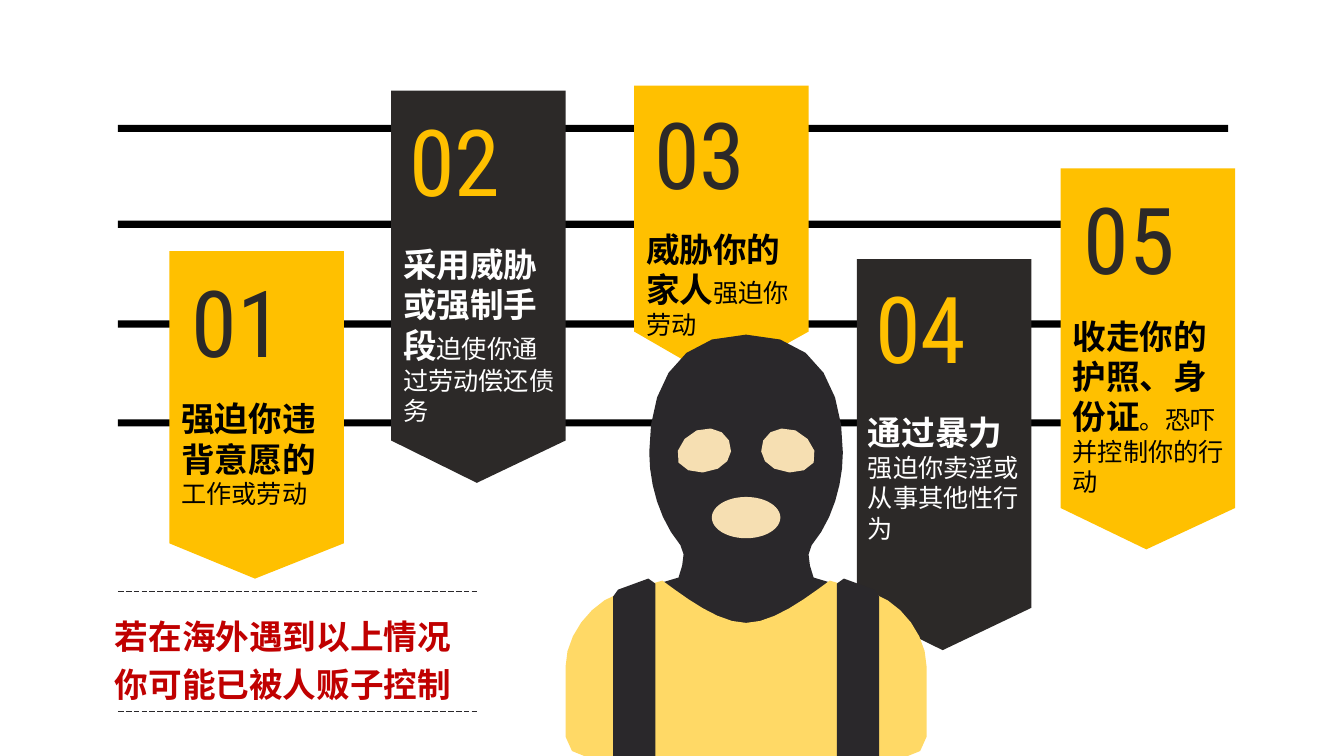
import math

import pptx
import pptx.util
import pptx.dml.color
import pptx.enum.dml
import pptx.enum.shapes
import pptx.enum.text
import pptx.oxml

Inches = pptx.util.Inches
RGBColor = pptx.dml.color.RGBColor
BLACK = RGBColor(0x00, 0x00, 0x00)
WHITE = RGBColor(0xFF, 0xFF, 0xFF)
RED = RGBColor(0xC0, 0x00, 0x00)
GOLD = RGBColor(0xFF, 0xC0, 0x00)
CHARCOAL = RGBColor(0x2C, 0x29, 0x28)
MASK = RGBColor(0x2A, 0x28, 0x2B)
SKIN = RGBColor(0xF6, 0xDF, 0xB2)
SHIRT = RGBColor(0xFF, 0xD9, 0x66)

prs = pptx.Presentation()
prs.slide_width = Inches(13.33)
prs.slide_height = Inches(7.5)
s = prs.slides.add_slide(prs.slide_layouts[6])


def add_outline(points, color, curved=True):
    corners = points
    if curved:
        corners = [points[0]]
        for i in range(0, len(points) - 1, 3):
            a, b, c, d = points[i:i + 4]
            straight = b == c and b in (a, d)
            steps = 1 if straight else min(6, math.ceil(math.dist(a, d) / 0.15))
            for t in [n / steps for n in range(1, steps + 1)]:
                u = 1 - t
                corners.append([u**3 * a[k] + 3 * u * u * t * b[k] + 3 * u * t * t * c[k] + t**3 * d[k]
                                for k in (0, 1)])
    corners = [(Inches(x), Inches(y)) for x, y in corners]
    if corners[-1] == corners[0]:
        corners.pop()
    fb = s.shapes.build_freeform(*corners[0])
    fb.add_line_segments(corners[1:], close=True)
    sp = fb.convert_to_shape()
    sp.shadow.inherit = False
    sp.fill.solid()
    sp.fill.fore_color.rgb = color
    sp.line.fill.background()


def add_text(box, paragraphs, wrap=True, inset=None, spacing=None):
    tf = s.shapes.add_textbox(*[Inches(v) for v in box]).text_frame
    tf.word_wrap = wrap
    tf.auto_size = pptx.enum.text.MSO_AUTO_SIZE.SHAPE_TO_FIT_TEXT
    if inset is not None:
        tf.margin_left = tf.margin_right = tf.margin_top = tf.margin_bottom = Inches(inset)
    for i, runs in enumerate(paragraphs):
        p = tf.add_paragraph() if i else tf.paragraphs[0]
        if spacing:
            p.line_spacing = spacing
        for text, size, bold, color, font in runs:
            r = p.add_run()
            r.text = text
            r.font.size = pptx.util.Pt(size)
            r.font.bold = bold
            r.font.name = font
            r.font.color.rgb = color


for top in (1.24, 2.19, 3.18, 4.16):
    sp = s.shapes.add_shape(pptx.enum.shapes.MSO_SHAPE.RECTANGLE,
                            Inches(1.17), Inches(top), Inches(11.01), Inches(0.07))
    sp.shadow.inherit = False
    sp.fill.solid()
    sp.fill.fore_color.rgb = BLACK
    sp.line.fill.background()

add_text((1.04, 5.98, 3.72, 1.07),
         [[(line, 24, True, RED, "Arial")] for line in ("若在海外遇到以上情况", "你可能已被人贩子控制")],
         spacing=1.2)

SIGNS = [
    (1.68, 2.49, 5.39, 5.74, (1.9, 2.63, 1.26, 1.19), (1.7, 3.9, 1.71, 1.21),
     "强迫你违背意愿的", "工作或劳动"),
    (3.88, 0.9, 4.37, 4.79, (4.06, 1.03, 1.36, 1.19), (3.9, 2.37, 1.71, 1.92),
     "采用威胁或强制手段", "迫使你通过劳动偿还债务"),
    (6.29, 0.85, 3.29, 3.78, (6.49, 0.96, 1.26, 1.19), (6.31, 2.22, 1.71, 1.21),
     "威胁你的家人", "强迫你劳动"),
    (8.5, 2.57, 6.03, 6.45, (8.68, 2.69, 1.36, 1.19), (8.51, 4.04, 1.71, 1.41),
     "通过暴力", "强迫你卖淫或从事其他性行为"),
    (10.52, 1.67, 5.04, 5.45, (10.75, 1.81, 1.26, 1.19), (10.54, 3.08, 1.76, 1.92),
     "收走你的护照、身份证", "。恐吓并控制你的行动"),
]
for n, (x, top, shoulder, tip, number_box, body_box, lead, rest) in enumerate(SIGNS, 1):
    fill, accent, ink = (GOLD, CHARCOAL, BLACK) if n % 2 else (CHARCOAL, GOLD, WHITE)
    right = x + 1.73
    add_outline([(right, shoulder), (x + 0.85, tip), (x, shoulder), (x, top), (right, top)],
                fill, curved=False)
    add_text(number_box, [[(f"{n:02d}", 66, False, accent, "Roboto Condensed")]], wrap=False, inset=0)
    add_text(body_box, [[(lead, 24, True, ink, "Arial"), (rest, 18, False, ink, "Arial")]])

AXIS = 7.4
hood = [(5.73, 6.26), (5.83, 6.1), (5.97, 5.97), *[(6.13, 5.91)] * 3, (6.73, 5.73),
        (6.76, 5.65), (6.78, 5.57), (6.78, 5.5), (6.78, 5.47), (6.77, 5.44), (6.75, 5.41),
        (6.54, 5.16), (6.44, 4.8), (6.44, 4.49), (6.44, 3.94), (6.63, 3.32), (AXIS, 3.32)]
eye = [(7.23, 4.37), (7.28, 4.48), (7.24, 4.59), (7.12, 4.65), (6.98, 4.72), (6.79, 4.69),
       (6.73, 4.59), (6.68, 4.48), (6.77, 4.33), (6.91, 4.27), (7.06, 4.22), (7.18, 4.27),
       (7.23, 4.37)]
shirt = [(5.82, 7.51), (5.71, 7.51), (5.61, 7.42), *[(5.61, 7.31)] * 3, (5.61, 6.61),
         (5.61, 6.31), (5.85, 5.99), *[(6.13, 5.89)] * 3, (6.57, 5.76),
         (6.8, 5.93), (7.13, 6.18), (AXIS, 6.18)]
strap = [(6.43, 5.74), *[(6.13, 5.85)] * 3, (6.1, 5.86), (6.08, 5.89), (6.08, 5.92),
         *[(6.08, 7.51)] * 3, *[(6.5, 7.51)] * 3, *[(6.5, 5.79)] * 3,
         (6.5, 5.76), (6.46, 5.73), (6.43, 5.74)]
hood_mirror, eye_mirror, shirt_mirror, strap_mirror = [
    [(2 * AXIS - x, y) for x, y in part] for part in (hood, eye, shirt, strap)]

add_outline(hood + hood_mirror[-2::-1], MASK)
add_outline(eye, SKIN)
add_outline(eye_mirror, SKIN)
sp = s.shapes.add_shape(pptx.enum.shapes.MSO_SHAPE.OVAL,
                        Inches(7.06), Inches(4.93), Inches(0.68), Inches(0.41))
sp.shadow.inherit = False
sp.fill.solid()
sp.fill.fore_color.rgb = SKIN
sp.line.fill.background()
add_outline(shirt + shirt_mirror[-2::-1], SHIRT)
add_outline(strap, MASK)
add_outline(strap_mirror, MASK)

for y in (5.87, 7.06):
    rule = s.shapes.add_connector(pptx.enum.shapes.MSO_CONNECTOR.STRAIGHT,
                                  Inches(1.17), Inches(y), Inches(4.74), Inches(y))
    rule.line.color.rgb = MASK
    rule.line.width = pptx.util.Pt(0.5)
    rule.line.dash_style = pptx.enum.dml.MSO_LINE.LONG_DASH
    rule._element.spPr.append(pptx.oxml.parse_xml(
        '<a:effectLst xmlns:a="http://schemas.openxmlformats.org/drawingml/2006/main"/>'))

prs.save("out.pptx")
